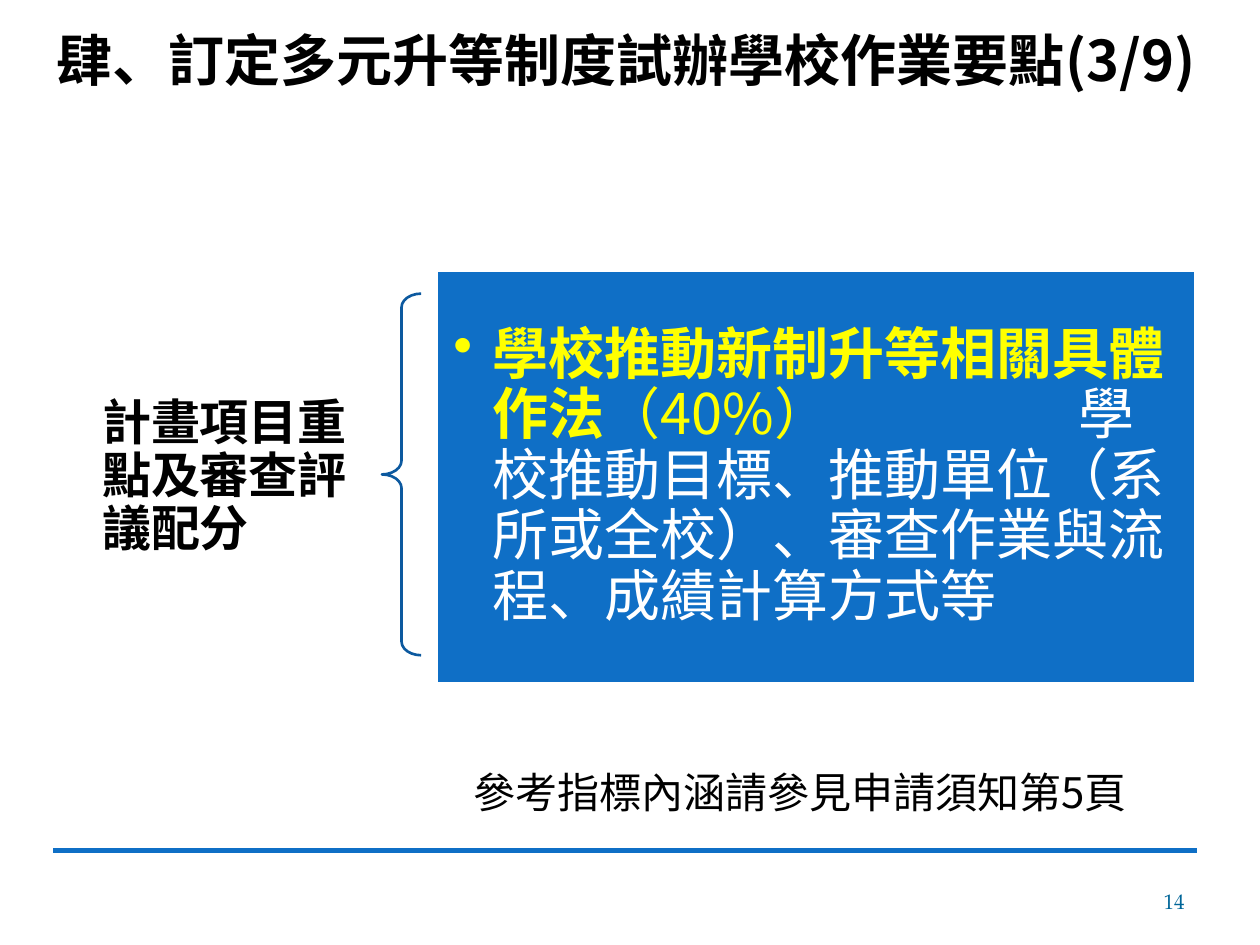
from lxml import etree
from pptx import Presentation
from pptx.dml.color import RGBColor
from pptx.enum import shapes, text
from pptx.oxml.ns import qn
from pptx.util import Cm, Pt

BLACK = RGBColor(0x00, 0x00, 0x00)
WHITE = RGBColor(0xFF, 0xFF, 0xFF)
BLUE = RGBColor(0x0F, 0x6F, 0xC6)
NAVY = RGBColor(0x0C, 0x59, 0x9F)
TEAL = RGBColor(0x00, 0x66, 0x99)
YELLOW = RGBColor(0xFF, 0xFF, 0x00)
SANS = "Noto Sans CJK SC"
SERIF = "TeX Gyre Pagella"

deck = Presentation()
deck.slide_width, deck.slide_height = Cm(25.4), Cm(19.05)
slide = deck.slides.add_slide(deck.slide_layouts[6])
items = slide.shapes


def write(shape, runs, size, font=SANS, align=text.PP_ALIGN.LEFT,
          anchor=text.MSO_ANCHOR.TOP, pad=(0.25, 0.13), space=None):
    """Fill a shape with one paragraph of (words, colour, bold) runs."""
    frame = shape.text_frame
    frame.word_wrap = True
    frame.vertical_anchor = anchor
    frame.margin_left = frame.margin_right = Cm(pad[0])
    frame.margin_top = frame.margin_bottom = Cm(pad[1])
    para = frame.paragraphs[0]
    para.alignment = align
    if space:
        para.line_spacing = space
    for words, color, bold in runs:
        run = para.add_run()
        run.text = words
        run.font.size, run.font.bold = Pt(size), bold
        run.font.name = font
        run.font.color.rgb = color
        east = etree.SubElement(run.font._element, qn("a:ea"))
        east.set("typeface", font)
    return para


# Rule above the footer
rule = items.add_connector(shapes.MSO_CONNECTOR.STRAIGHT,
                           Cm(1.07), Cm(17.15), Cm(24.13), Cm(17.15))
rule.line.color.rgb = BLUE
rule.line.width = Pt(3)
etree.SubElement(rule._element.spPr, qn("a:effectLst"))

# Title
title = items.add_textbox(Cm(0.89), Cm(0.38), Cm(23.8), Cm(1.63))
write(title, [("肆、訂定多元升等制度試辦學校作業要點(3/9)", BLACK, True)], 32)

# Topic on the left
topic = items.add_textbox(Cm(1.5), Cm(7.67), Cm(6.2), Cm(3.91))
write(topic, [("計畫項目重點及審查評議配分", BLACK, True)], 28,
      anchor=text.MSO_ANCHOR.MIDDLE, pad=(0.56, 0.2), space=0.9)

# Brace
brace = items.add_shape(shapes.MSO_SHAPE.LEFT_BRACE,
                        Cm(7.7), Cm(5.92), Cm(0.79), Cm(7.29))
brace.adjustments[0], brace.adjustments[1] = 0.35, 0.5
brace.shadow.inherit = False
brace.fill.background()
brace.line.color.rgb = NAVY
brace.line.width = Pt(1.5)

# Blue panel with the bulleted item
panel = items.add_shape(shapes.MSO_SHAPE.RECTANGLE,
                        Cm(8.81), Cm(5.46), Cm(15.29), Cm(8.31))
panel.shadow.inherit = False
panel.fill.solid()
panel.fill.fore_color.rgb = BLUE
panel.line.color.rgb = WHITE
panel.line.width = Pt(1.5)
para = write(panel, [
    ("學校推動新制升等相關具體作法", YELLOW, True),
    ("（40%）\t", YELLOW, False),
    ("學校推動目標、推動單位（系所或全校）、審查作業與流程、成績計算方式等",
     WHITE, False),
], 32, anchor=text.MSO_ANCHOR.MIDDLE, pad=(0.33, 0.33), space=0.9)
props = para._p.get_or_add_pPr()
props.set("marL", str(Cm(0.79)))
props.set("indent", str(-Cm(0.79)))
etree.SubElement(props, qn("a:buChar")).set("char", "•")
tabs = etree.SubElement(props, qn("a:tabLst"))
stop = etree.SubElement(tabs, qn("a:tab"))
stop.set("pos", str(Cm(12.6)))
stop.set("algn", "l")

# Note below the panel
note = items.add_textbox(Cm(9.3), Cm(15.32), Cm(14.4), Cm(1.27))
write(note, [("參考指標內涵請參見申請須知第5頁", BLACK, False)], 24)

# Page number
page = items.add_textbox(Cm(18.21), Cm(17.65), Cm(5.92), Cm(1.02))
write(page, [("14", TEAL, False)], 12, font=SERIF,
      align=text.PP_ALIGN.RIGHT, anchor=text.MSO_ANCHOR.MIDDLE)

deck.save("out.pptx")
